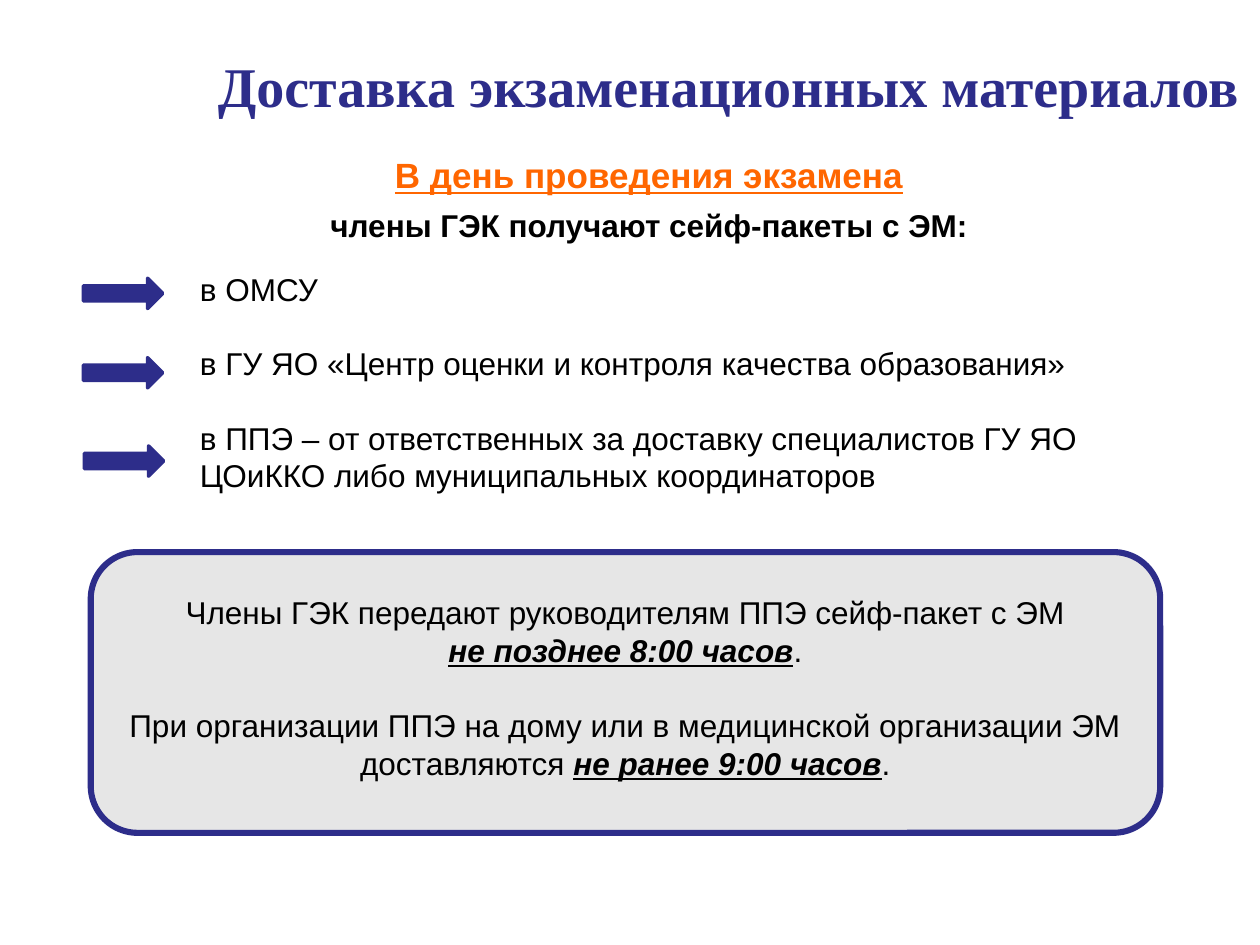
from dataclasses import dataclass

from pptx import Presentation
from pptx.dml.color import RGBColor
from pptx.enum.shapes import MSO_SHAPE
from pptx.enum.text import MSO_AUTO_SIZE, PP_ALIGN
from pptx.util import Cm, Pt

ROUNDED = MSO_SHAPE.ROUNDED_RECTANGLE
ARROW = MSO_SHAPE.RIGHT_ARROW
GROW = MSO_AUTO_SIZE.SHAPE_TO_FIT_TEXT
LEFT, CENTER = PP_ALIGN.LEFT, PP_ALIGN.CENTER
BLANK_LAYOUT = 6


@dataclass(frozen=True)
class Theme:
    navy: RGBColor = RGBColor(0x2D, 0x2D, 0x8A)
    orange: RGBColor = RGBColor(0xFF, 0x66, 0x00)
    black: RGBColor = RGBColor(0, 0, 0)
    grey: RGBColor = RGBColor(0xE6, 0xE6, 0xE6)
    title_font: str = "Times New Roman"
    body_font: str = "Arial"
    title_size: Pt = Pt(32)
    heading_size: Pt = Pt(20)
    body_size: Pt = Pt(18)
    item_gap: Pt = Pt(21)


THEME = Theme()


def add_figure(page, kind, left, top, width, height, fill, line_width):
    """Filled preset shape with a navy outline; lengths in cm."""
    shape = page.shapes.add_shape(kind, Cm(left), Cm(top), Cm(width), Cm(height))
    shape.shadow.inherit = False
    shape.fill.solid()
    shape.fill.fore_color.rgb = fill
    shape.line.color.rgb = THEME.navy
    shape.line.width = Pt(line_width)


def add_text(page, left, top, width, height, lines, align=CENTER):
    """Text box with one paragraph per line; returns its paragraphs."""
    box = page.shapes.add_textbox(Cm(left), Cm(top), Cm(width), Cm(height))
    frame = box.text_frame
    frame.word_wrap = True
    frame.auto_size = GROW
    frame.text = "\n".join(lines)
    for para in frame.paragraphs:
        para.alignment = align
        style(para.runs[0])
    return frame.paragraphs


def style(span, size=THEME.body_size, color=THEME.black, font=THEME.body_font,
          bold=False, italic=False, underline=False):
    span.font.name = font
    span.font.size = size
    span.font.color.rgb = color
    span.font.bold = bold
    span.font.italic = italic
    span.font.underline = underline


def add_deadline(para, text):
    """Append an emphasised time and a plain full stop."""
    for words, strong in ((text, True), (".", False)):
        span = para.add_run()
        span.text = words
        style(span, bold=strong, italic=strong, underline=strong)


def add_heading(page):
    title, = add_text(page, 3.3, 0.91, 22.78, 1.63,
                      ["Доставка экзаменационных материалов"])
    style(title.runs[0], THEME.title_size, THEME.navy, THEME.title_font, bold=True)

    day, members = add_text(page, 3.18, 2.13, 19.81, 2.95,
                            ["В день проведения экзамена",
                             "члены ГЭК получают сейф-пакеты с ЭМ:"])
    day.line_spacing = 2.0
    day.space_after = Pt(6)
    style(day.runs[0], THEME.heading_size, THEME.orange, bold=True, underline=True)
    style(members.runs[0], bold=True)


def add_places(page):
    places = add_text(page, 3.78, 5.31, 20.6, 4.88,
                      ["в ОМСУ",
                       "в ГУ ЯО «Центр оценки и контроля качества образования»",
                       "в ППЭ – от ответственных за доставку специалистов ГУ ЯО "
                       "ЦОиККО либо муниципальных координаторов"], LEFT)
    for para in places[1:]:
        para.space_before = THEME.item_gap
    for left, top in ((1.68, 5.61), (1.68, 7.21), (1.7, 8.99)):
        add_figure(page, ARROW, left, top, 1.6, 0.61, THEME.navy, 2)


def add_deadlines(page):
    add_figure(page, ROUNDED, 1.83, 11.13, 21.56, 5.66, THEME.grey, 3.5)
    handover, home = add_text(
        page, 2.18, 11.84, 20.85, 4.11,
        ["Члены ГЭК передают руководителям ППЭ сейф-пакет с ЭМ",
         "При организации ППЭ на дому или в медицинской организации ЭМ доставляются "])
    handover.add_line_break()
    add_deadline(handover, "не позднее 8:00 часов")
    home.space_before = THEME.item_gap
    add_deadline(home, "не ранее 9:00 часов")


def main():
    deck = Presentation()
    deck.slide_width, deck.slide_height = Cm(25.4), Cm(19.05)
    page = deck.slides.add_slide(deck.slide_layouts[BLANK_LAYOUT])

    # Title and subtitle
    add_heading(page)
    # Places of receipt, each with an arrow
    add_places(page)
    # Panel with the delivery times
    add_deadlines(page)

    deck.save("out.pptx")


if __name__ == "__main__":
    main()
